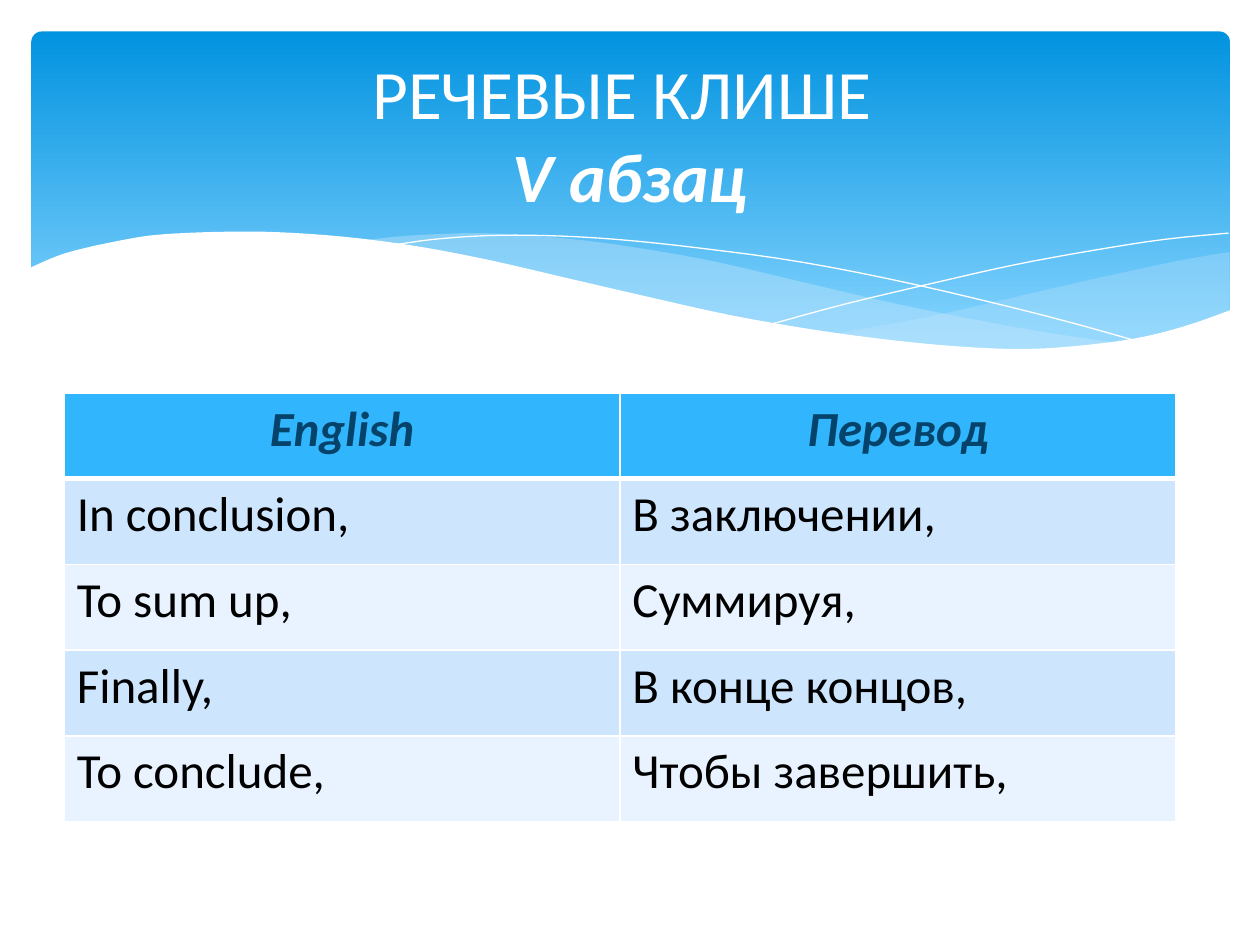
from dataclasses import dataclass
from typing import Optional

from lxml import etree
from pptx import Presentation, util as u
from pptx.dml.color import RGBColor
from pptx.enum import shapes as kinds, text as t
from pptx.oxml import ns

PX = 9144  # EMU in one px, at 100 px to the inch
Point = tuple[float, float]


@dataclass(frozen=True)
class Theme:
    font: str = "Calibri"
    title_size: float = 39.6
    table_size: float = 28
    white: str = "FFFFFF"
    black: str = "000000"
    sky_top: str = "0293E0"
    sky_bottom: str = "83D3FE"
    mist: str = "C6E7FC"
    header_fill: str = "31B6FD"
    header_text: str = "06436B"
    bands: tuple[str, str] = ("CEE5FE", "E8F3FF")


@dataclass(frozen=True)
class Wave:
    """A freeform whose edges are smooth curves through a few points."""
    edges: list[list[Point]]
    fill: Optional[str] = None
    opacity: int = 100


THEME = Theme()

WAVES = [
    Wave([[(976, 200), (935, 207), (861, 223), (779, 242), (729, 253), (661, 265)],
          [(661, 265), (719, 272), (769, 277), (814, 278), (854, 276), (889, 272),
           (921, 265), (949, 257), (976, 247)]], THEME.mist, 29),
    Wave([[(893, 273), (837, 265), (775, 254), (706, 240), (629, 222), (569, 208),
           (514, 198), (465, 191), (420, 187), (380, 185), (344, 186), (313, 188),
           (286, 191)],
          [(286, 191), (342, 199), (404, 211), (449, 222), (530, 240), (601, 255),
           (665, 266), (722, 274), (773, 277), (818, 278), (857, 277), (893, 273)]],
         THEME.mist, 40),
    Wave([[(309, 195), (344, 190), (387, 187), (433, 187), (489, 190), (556, 197),
           (636, 208), (727, 226), (831, 251), (907, 272)]]),
    Wave([[(613, 257), (672, 241), (748, 223), (806, 210), (866, 199), (924, 190),
           (975, 185)]]),
    Wave([[(977, 246), (940, 259), (899, 269), (850, 275), (809, 277), (761, 275),
           (708, 270), (648, 262), (579, 250), (503, 233), (447, 220), (391, 207),
           (340, 197), (292, 190), (250, 186), (211, 184), (177, 184), (146, 185),
           (119, 187), (95, 191), (67, 197), (46, 203), (23, 213)],
          [(23, 329), (977, 329)]], THEME.white),
]

TABLE_ROWS = [
    ("English", "Перевод"),
    ("In conclusion,", "В заключении,"),
    ("To sum up,", "Суммируя,"),
    ("Finally,", "В конце концов,"),
    ("To conclude,", "Чтобы завершить,"),
]


def rgb(colour: str) -> RGBColor:
    return RGBColor.from_string(colour)


def apply_format(target, values: dict) -> None:
    for name, value in values.items():
        setattr(target, name, value)


def format_font(font, size: float, colour: str, emphasis: bool) -> None:
    apply_format(font, {"name": THEME.font, "size": u.Pt(size),
                        "bold": emphasis, "italic": emphasis})
    font.color.rgb = rgb(colour)


def smooth(points: list[Point], steps: int = 4) -> list[Point]:
    """Catmull-Rom curve through the points; two points stay a straight line."""
    if len(points) == 2:
        return points
    padded = [points[0], *points, points[-1]]
    curve = [points[0]]
    for a, b, c, d in zip(padded, padded[1:], padded[2:], padded[3:]):
        for step in range(1, steps + 1):
            s = step / steps
            curve.append(tuple(
                (2 * q + (r - p) * s + (2 * p - 5 * q + 4 * r - v) * s ** 2
                 + (3 * q - p - 3 * r + v) * s ** 3) / 2
                for p, q, r, v in zip(a, b, c, d)))
    return curve


def draw_sky(slide) -> None:
    sky = slide.shapes.add_shape(kinds.MSO_SHAPE.ROUNDED_RECTANGLE,
                                 25 * PX, 25 * PX, 951 * PX, 270 * PX)
    sky.adjustments[0] = 0.03
    sky.shadow.inherit = False
    sky.line.fill.background()
    sky.fill.gradient()
    sky.fill.gradient_angle = 270
    stops = [(0, THEME.sky_top), (0.9, THEME.sky_bottom)]
    for stop, (position, colour) in zip(sky.fill.gradient_stops, stops):
        stop.position = position
        stop.color.rgb = rgb(colour)


def draw_wave(slide, wave: Wave) -> None:
    points = [(x * PX, y * PX) for edge in wave.edges for x, y in smooth(edge)]
    builder = slide.shapes.build_freeform(*points[0])
    builder.add_line_segments(points[1:], close=wave.fill is not None)
    shape = builder.convert_to_shape()
    shape.shadow.inherit = False
    if wave.fill is None:
        shape.fill.background()
        shape.line.color.rgb = rgb(THEME.white)
        shape.line.width = 0
        return
    shape.line.fill.background()
    shape.fill.solid()
    shape.fill.fore_color.rgb = rgb(wave.fill)
    if wave.opacity < 100:
        colour = shape.element.spPr.find(f"{ns.qn('a:solidFill')}/{ns.qn('a:srgbClr')}")
        etree.SubElement(colour, ns.qn("a:alpha"), val=str(wave.opacity * 1000))


def write_title(slide) -> None:
    title = slide.shapes.title
    apply_format(title, {"left": 50 * PX, "top": 37 * PX,
                         "width": 900 * PX, "height": 137 * PX})
    apply_format(title.text_frame, {"word_wrap": True, "auto_size": t.MSO_AUTO_SIZE.NONE,
                                    "vertical_anchor": t.MSO_ANCHOR.MIDDLE})
    paragraph = title.text_frame.paragraphs[0]
    paragraph.alignment = t.PP_ALIGN.CENTER
    for line, emphasis in (("РЕЧЕВЫЕ КЛИШЕ ", False), ("V абзац", True)):
        if paragraph.runs:
            paragraph.add_line_break()
        run = paragraph.add_run()
        run.text = line
        format_font(run.font, THEME.title_size, THEME.white, emphasis)
    title.element.getparent().append(title.element)  # bring to front


def set_borders(cell, widths: dict[str, int]) -> None:
    """Draw white borders; they must precede the fill in the cell properties."""
    properties = cell._tc.get_or_add_tcPr()
    for index, (side, width) in enumerate(widths.items()):
        line = etree.Element(ns.qn(f"a:ln{side}"), w=str(u.Pt(width)))
        fill = etree.SubElement(line, ns.qn("a:solidFill"))
        etree.SubElement(fill, ns.qn("a:srgbClr"), val=THEME.white)
        properties.insert(index, line)


def draw_table(slide) -> None:
    table = slide.shapes.add_table(len(TABLE_ROWS), 2, 51 * PX, 312 * PX,
                                   882 * PX, 340 * PX).table
    for row_index, row in enumerate(TABLE_ROWS):
        header = row_index == 0
        table.rows[row_index].height = 68 * PX
        for column_index, wording in enumerate(row):
            cell = table.cell(row_index, column_index)
            cell.text = wording
            cell.fill.solid()
            cell.fill.fore_color.rgb = rgb(
                THEME.header_fill if header else THEME.bands[(row_index - 1) % 2])
            paragraph = cell.text_frame.paragraphs[0]
            paragraph.alignment = t.PP_ALIGN.CENTER if header else t.PP_ALIGN.LEFT
            format_font(paragraph.runs[0].font, THEME.table_size,
                        THEME.header_text if header else THEME.black, header)
            set_borders(cell, {"L": 1, "R": 1, "T": 3 if row_index == 1 else 1,
                               "B": 3 if header else 1})


def main() -> None:
    presentation = Presentation()
    apply_format(presentation, {"slide_width": 1000 * PX, "slide_height": 750 * PX})
    slide = presentation.slides.add_slide(presentation.slide_layouts[5])
    draw_sky(slide)
    for wave in WAVES:
        draw_wave(slide, wave)
    write_title(slide)
    draw_table(slide)
    presentation.save("out.pptx")


if __name__ == "__main__":
    main()
